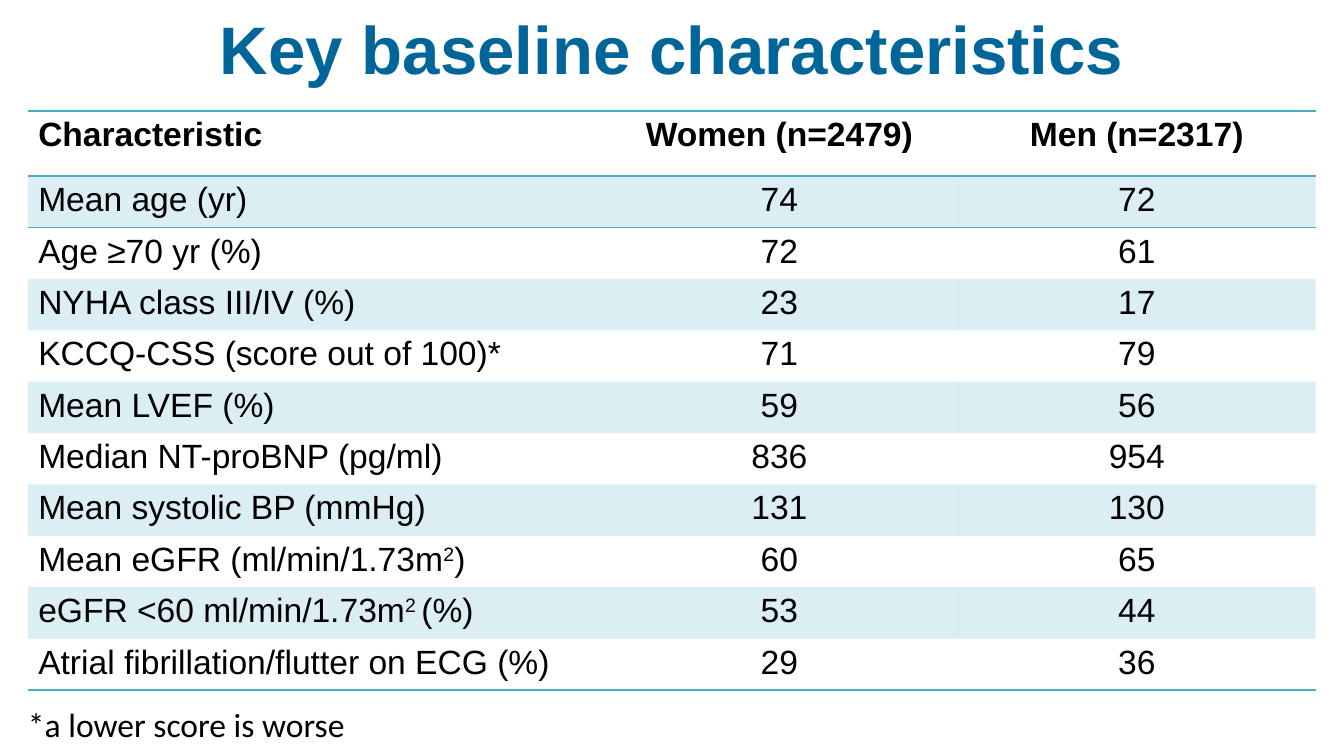
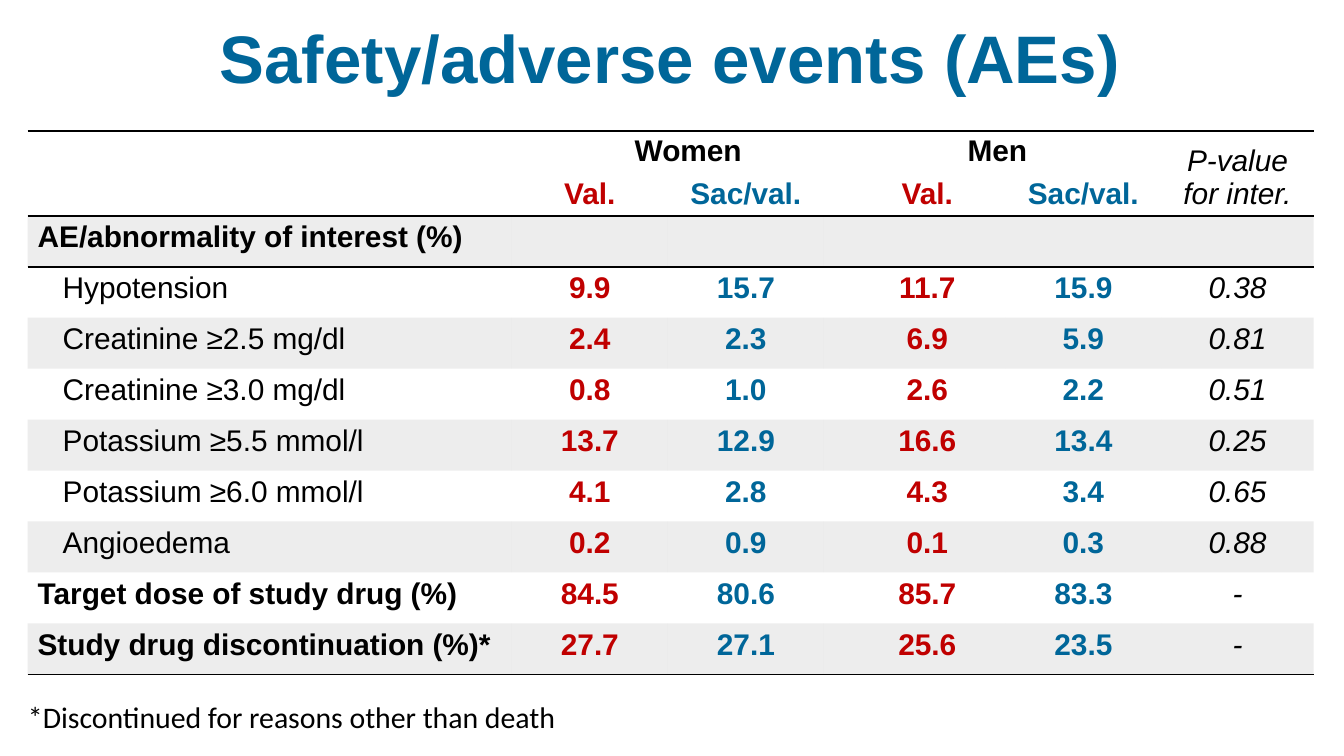
from pptx import Presentation
from pptx.dml.color import RGBColor
from pptx.enum import text
from pptx.oxml import parse_xml
from pptx.oxml.ns import nsdecls, qn
from pptx.util import Pt

BLUE = RGBColor(0x00, 0x66, 0x99)
RED = RGBColor(0xC0, 0x00, 0x00)
BLACK = RGBColor(0x00, 0x00, 0x00)
TEAL = RGBColor(0x4B, 0xAC, 0xC6)
GREY = RGBColor(0xA6, 0xA6, 0xA6)
NO_STYLE = "{2D5ABB26-0587-4C30-8999-92F81FD0307C}"
LEFT, CENTER = text.PP_ALIGN.LEFT, text.PP_ALIGN.CENTER
TOP, MIDDLE, BOTTOM = text.MSO_ANCHOR.TOP, text.MSO_ANCHOR.MIDDLE, text.MSO_ANCHOR.BOTTOM


def write(tf, words, size, color=BLACK, bold=False, italic=False, align=LEFT, font="Arial"):
    p = tf.paragraphs[0]
    p.alignment = align
    for i, part in enumerate(words.split("^")):
        r = p.add_run()
        r.text = part
        r.font.name, r.font.size = font, Pt(size)
        r.font.bold, r.font.italic = bold, italic
        r.font.color.rgb = color
        if i % 2:
            r._r.get_or_add_rPr().set("baseline", "30000")


def add_grid(s, x, y, widths, heights, band, rule):
    n = len(heights)
    tbl = s.shapes.add_table(n, len(widths), Pt(x), Pt(y), Pt(sum(widths)), Pt(sum(heights))).table
    tbl._tbl.tblPr.find(qn("a:tableStyleId")).text = NO_STYLE
    for col, w in zip(tbl.columns, widths):
        col.width = Pt(w)
    for i, h in enumerate(heights):
        tbl.rows[i].height = Pt(h)
        edges = {0: ("lnT", "lnB"), 1: ("lnT",), n - 1: ("lnB",)}.get(i, ())
        for cell in tbl.rows[i].cells:
            cell.margin_left = cell.margin_right = Pt(5.4)
            cell.margin_top = cell.margin_bottom = Pt(2.7)
            tcPr = cell._tc.get_or_add_tcPr()
            for edge in edges:
                tcPr.append(parse_xml(
                    f'<a:{edge} {nsdecls("a")} w="12700"><a:solidFill>'
                    f'<a:srgbClr val="{rule}"/></a:solidFill></a:{edge}>'))
            if i % 2:
                cell.fill.solid()
                cell.fill.fore_color.rgb = band
                clr = tcPr.find(qn("a:solidFill")).find(qn("a:srgbClr"))
                clr.append(parse_xml(f'<a:alpha {nsdecls("a")} val="20000"/>'))
            else:
                cell.fill.background()
    return tbl


prs = Presentation()
prs.slide_width, prs.slide_height = Pt(720), Pt(405)
baseline, safety = [prs.slides.add_slide(prs.slide_layouts[6]) for _ in range(2)]

title = dict(size=36, color=BLUE, bold=True, align=CENTER)
group = dict(size=16, bold=True, align=CENTER)
boxes = [
    (baseline, "Key baseline characteristics", 36, 2.2, 648, 46.8, MIDDLE, True, title),
    (baseline, "*a lower score is worse", 7.9, 373.7, 185.8, 29, TOP, False,
     dict(size=18, font="Calibri")),
    (safety, "Safety/adverse events (AEs)", 0, 0, 717.8, 60.5, MIDDLE, True, title),
    (safety, "Women", 293.8, 67, 149.8, 26.6, TOP, True, group),
    (safety, "Men", 459.4, 67, 149.8, 26.6, TOP, True, group),
    (safety, "*Discontinued for reasons other than death", 7.9, 370.8, 301, 26.6, TOP, False,
     dict(size=16, font="Calibri")),
]

characteristics = [
    ("Characteristic", "Women (n=2479)", "Men (n=2317)"),
    ("Mean age (yr)", "74", "72"),
    ("Age ≥70 yr (%)", "72", "61"),
    ("NYHA class III/IV (%)", "23", "17"),
    ("KCCQ-CSS (score out of 100)*", "71", "79"),
    ("Mean LVEF (%)", "59", "56"),
    ("Median NT-proBNP (pg/ml)", "836", "954"),
    ("Mean systolic BP (mmHg)", "131", "130"),
    ("Mean eGFR (ml/min/1.73m^2^)", "60", "65"),
    ("eGFR <60 ml/min/1.73m^2 ^(%)", "53", "44"),
    ("Atrial fibrillation/flutter on ECG (%)", "29", "36"),
]
tbl = add_grid(baseline, 15.1, 59.6, [306.7, 191.5, 191.5], [34.8] + [27.54] * 10, TEAL, TEAL)
for i, row in enumerate(characteristics):
    for j, words in enumerate(row):
        write(tbl.cell(i, j).text_frame, words, 18, bold=i == 0, align=CENTER if j else LEFT)

events = [
    ("", "Val.", "Sac/val.", "", "Val.", "Sac/val.", "P-value for inter."),
    ("AE/abnormality of interest (%)", "", "", "", "", "", ""),
    ("Hypotension", "9.9", "15.7", "", "11.7", "15.9", "0.38"),
    ("Creatinine ≥2.5 mg/dl", "2.4", "2.3", "", "6.9", "5.9", "0.81"),
    ("Creatinine ≥3.0 mg/dl", "0.8", "1.0", "", "2.6", "2.2", "0.51"),
    ("Potassium ≥5.5 mmol/l", "13.7", "12.9", "", "16.6", "13.4", "0.25"),
    ("Potassium ≥6.0 mmol/l", "4.1", "2.8", "", "4.3", "3.4", "0.65"),
    ("Angioedema", "0.2", "0.9", "", "0.1", "0.3", "0.88"),
    ("Target dose of study drug (%)", "84.5", "80.6", "", "85.7", "83.3", "-"),
    ("Study drug discontinuation (%)*", "27.7", "27.1", "", "25.6", "23.5", "-"),
]
colors = [BLACK, RED, BLUE, BLACK, RED, BLUE, BLACK]
tbl = add_grid(safety, 14.8, 70.2, [259.4, 83.6, 83.6, 13, 83.6, 83.6, 81.6],
               [45.4] + [27.3] * 9, GREY, BLACK)
for i, row in enumerate(events):
    indented = 2 <= i <= 7
    for j, words in enumerate(row):
        cell = tbl.cell(i, j)
        if i == 0:
            cell.vertical_anchor = BOTTOM
        if j == 0 and indented:
            cell.margin_left = Pt(18.8)
        if words:
            write(cell.text_frame, words, 16, colors[j], bold=j < 6 and not (j == 0 and indented),
                  italic=j == 6, align=CENTER if j else LEFT)

for s, words, x, y, w, h, anchor, wrap, style in boxes:
    tf = s.shapes.add_textbox(Pt(x), Pt(y), Pt(w), Pt(h)).text_frame
    tf.word_wrap, tf.vertical_anchor = wrap, anchor
    write(tf, words, **style)

prs.save("out.pptx")
